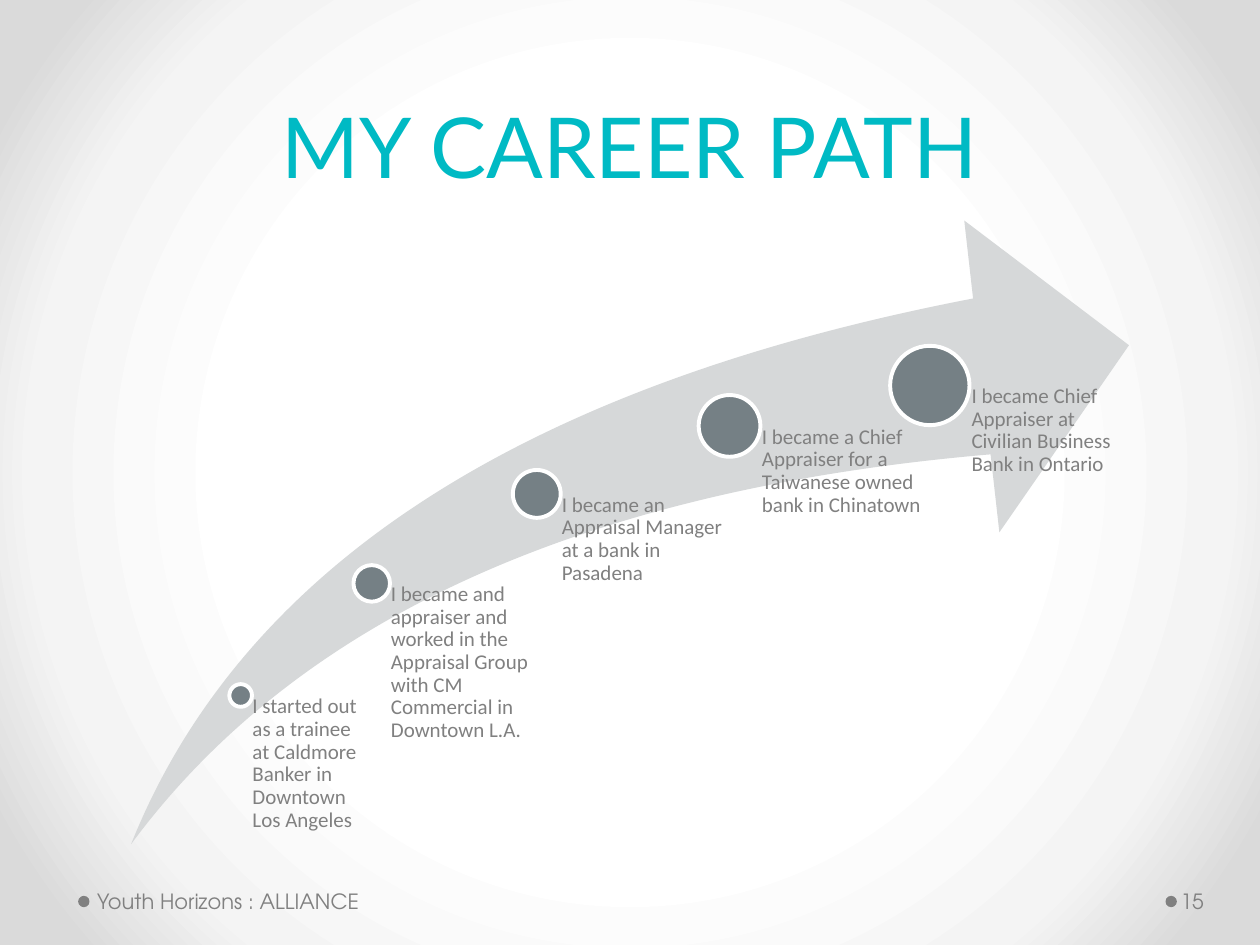
from dataclasses import dataclass

from pptx import Presentation
from pptx.dml.color import RGBColor
from pptx.enum.shapes import MSO_SHAPE as Preset
from pptx.enum.text import MSO_ANCHOR as Anchor, PP_ALIGN as Align
from pptx.oxml import parse_xml
from pptx.oxml.ns import nsdecls, qn
from pptx.shapes.autoshape import Shape
from pptx.slide import Slide
from pptx.util import Inches, Pt

WHITE = RGBColor(0xFF, 0xFF, 0xFF)
PALE_GRAY = RGBColor(0xF4, 0xF4, 0xF4)
EDGE_GRAY = RGBColor(0xDA, 0xDA, 0xDA)
ARROW_GRAY = RGBColor(0xD6, 0xD8, 0xD9)
SLATE = RGBColor(0x75, 0x80, 0x85)
TEXT_GRAY = RGBColor(0x80, 0x80, 0x80)
TEAL = RGBColor(0x00, 0xBA, 0xC4)

TITLE_FONT, BODY_FONT, FOOTER_FONT = "Lato", "Calibri", "TeX Gyre Adventor"
ARROW_BOTTOM = 6.7


@dataclass(frozen=True)
class Frame:
    left: float
    top: float
    width: float
    height: float

    def lengths(self) -> list[int]:
        return [Inches(v) for v in (self.left, self.top, self.width, self.height)]


@dataclass(frozen=True)
class TextStyle:
    font: str
    size: int
    color: RGBColor
    anchor: Anchor = Anchor.TOP
    align: Align = Align.LEFT
    spacing: float | Pt | None = None


@dataclass(frozen=True)
class Milestone:
    """A career step: circle centre and diameter, and the label's width."""
    x: float
    y: float
    diameter: float
    label_width: float
    label: str


TITLE = TextStyle(TITLE_FONT, 48, TEAL, Anchor.BOTTOM, Align.CENTER, Pt(58))
LABEL = TextStyle(BODY_FONT, 12, TEXT_GRAY, spacing=0.9)
FOOTER = TextStyle(FOOTER_FONT, 12, TEXT_GRAY, Anchor.MIDDLE)

MILESTONES = [
    Milestone(1.91, 5.52, 0.18, 1.04,
              "I started out as a trainee at Caldmore Banker in Downtown Los Angeles"),
    Milestone(2.95, 4.63, 0.29, 1.31,
              "I became and appraiser and worked in the Appraisal Group "
              "with CM Commercial in Downtown L.A."),
    Milestone(4.26, 3.92, 0.38, 1.53,
              "I became an Appraisal Manager at a bank in Pasadena"),
    Milestone(5.79, 3.38, 0.49, 1.58,
              "I became a Chief Appraiser for a Taiwanese owned bank in Chinatown"),
    Milestone(7.38, 3.06, 0.63, 1.58,
              "I became Chief Appraiser at Civilian Business Bank in Ontario"),
]


def set_background(page: Slide) -> None:
    """Fill the page with a gradient that darkens from the centre outwards."""
    page.background.fill.gradient()
    stops = [(50, WHITE), (76, PALE_GRAY), (92, EDGE_GRAY)]
    stop_xml = "".join(
        f'<a:gs pos="{percent * 1000}"><a:srgbClr val="{color}"/></a:gs>'
        for percent, color in stops)
    radial = parse_xml(
        f'<a:gradFill {nsdecls("a")} rotWithShape="1"><a:gsLst>{stop_xml}</a:gsLst>'
        '<a:path path="circle"><a:fillToRect l="50000" t="50000" r="50000" b="50000"/>'
        '</a:path></a:gradFill>')
    linear = next(page.element.iter(qn("a:gradFill")))
    linear.getparent().replace(linear, radial)


def add_filled(page: Slide, preset: Preset, frame: Frame, color: RGBColor) -> Shape:
    shape = page.shapes.add_shape(preset, *frame.lengths())
    shape.shadow.inherit = False
    shape.fill.solid()
    shape.fill.fore_color.rgb = color
    shape.line.fill.background()
    return shape


def add_text(page: Slide, frame: Frame, text: str, style: TextStyle,
             insets: tuple[float, float, float, float] = (0.1, 0.05, 0.1, 0.05)) -> None:
    """Add a text box; insets run left, top, right, bottom."""
    body = page.shapes.add_textbox(*frame.lengths()).text_frame
    body.word_wrap = True
    body.vertical_anchor = style.anchor
    (body.margin_left, body.margin_top,
     body.margin_right, body.margin_bottom) = map(Inches, insets)
    para = body.paragraphs[0]
    para.alignment = style.align
    para.line_spacing = style.spacing
    span = para.add_run()
    span.text = text
    span.font.name = style.font
    span.font.size = Pt(style.size)
    span.font.color.rgb = style.color


def add_milestone(page: Slide, step: Milestone) -> None:
    """Draw the circle, and a label running from its centre to the arrow's foot."""
    size, radius = step.diameter, step.diameter / 2
    circle = add_filled(page, Preset.OVAL,
                        Frame(step.x - radius, step.y - radius, size, size), SLATE)
    circle.line.color.rgb = WHITE
    circle.line.width = Pt(2.25)
    label_frame = Frame(step.x, step.y, step.label_width, ARROW_BOTTOM - step.y)
    add_text(page, label_frame, step.label, LABEL, (radius * 1.05, 0, 0, 0))


def main() -> None:
    deck = Presentation()
    deck.slide_width, deck.slide_height = Inches(10), Inches(7.5)
    page = deck.slides.add_slide(deck.slide_layouts[6])
    set_background(page)

    for bullet_left in (9.25, 0.62):
        add_filled(page, Preset.OVAL, Frame(bullet_left, 7.11, 0.09, 0.09), TEXT_GRAY)
    add_text(page, Frame(0.5, 0.15, 9, 1.45), "MY CAREER PATH", TITLE)

    arrow = add_filled(page, Preset.SWOOSH_ARROW,
                       Frame(1.04, 1.75, 7.92, ARROW_BOTTOM - 1.75), ARROW_GRAY)
    arrow.adjustments[0] = arrow.adjustments[1] = 0.25
    for step in MILESTONES:
        add_milestone(page, step)

    add_text(page, Frame(0.72, 6.95, 3.11, 0.4), "Youth Horizons : ALLIANCE", FOOTER,
             (0.05, 0.05, 0.1, 0.05))
    add_text(page, Frame(9.34, 6.95, 0.61, 0.4), "15", FOOTER,
             (0.03, 0.05, 0.05, 0.05))
    deck.save("out.pptx")


if __name__ == "__main__":
    main()
